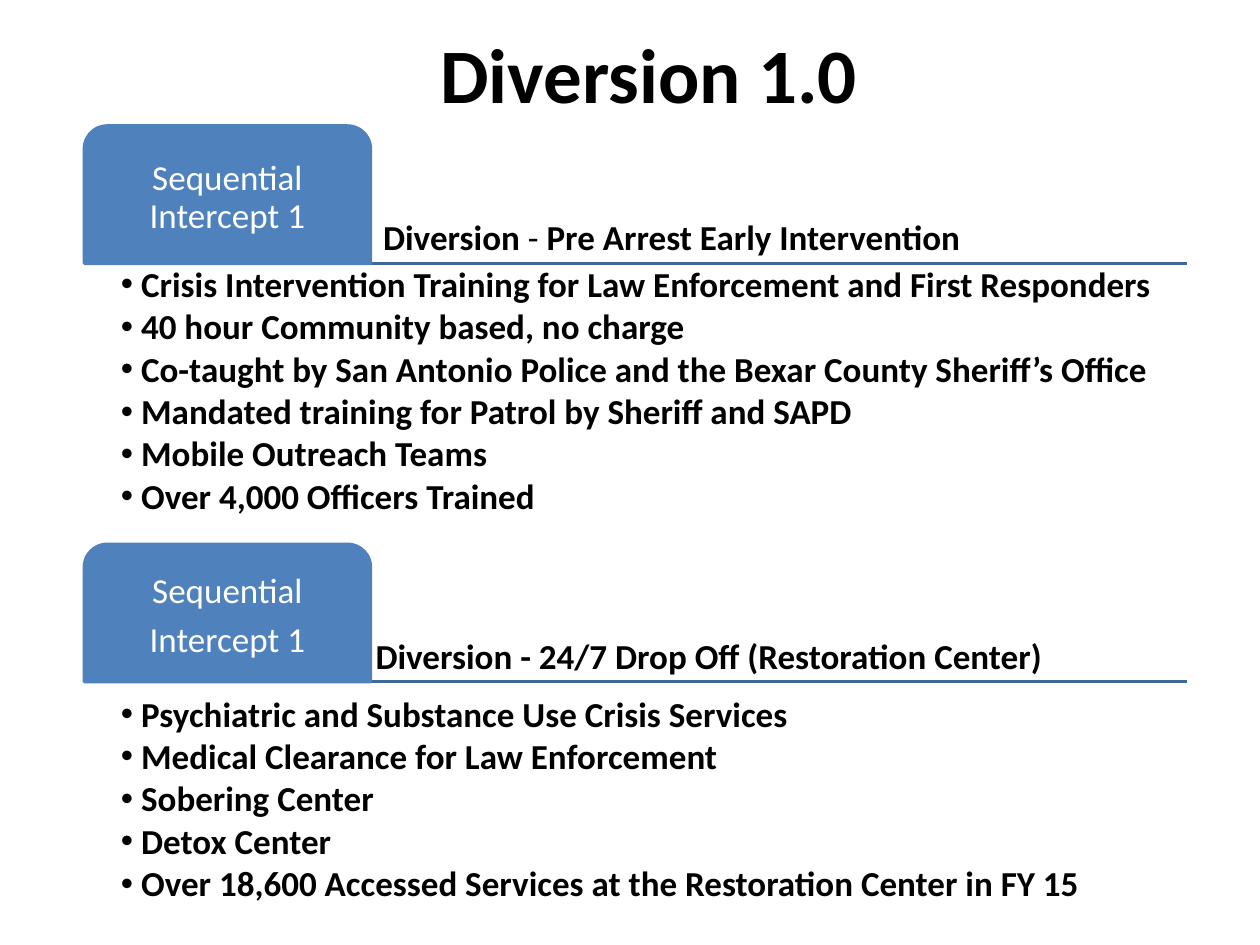
from dataclasses import dataclass
from typing import Any

from lxml.etree import SubElement
from pptx import Presentation
from pptx.dml.color import RGBColor
from pptx.enum.shapes import MSO_CONNECTOR as Connector, MSO_SHAPE as Shape
from pptx.enum.text import MSO_ANCHOR as Anchor, MSO_AUTO_SIZE as AutoSize, PP_ALIGN as Align
from pptx.oxml.ns import qn
from pptx.util import Inches, Pt


@dataclass(frozen=True)
class Theme:
    """Colours, fonts and type sizes of the slide."""
    tab: RGBColor = RGBColor(0x4F, 0x81, 0xBD)
    rule: RGBColor = RGBColor(0x3F, 0x67, 0x97)
    ink: RGBColor = RGBColor(0, 0, 0)
    tab_ink: RGBColor = RGBColor(0xFF, 0xFF, 0xFF)
    font: str = "Calibri"
    bullet_font: str = "Arial"
    title: Pt = Pt(44)
    body: Pt = Pt(20)
    line: Pt = Pt(2)
    tab_gap: Pt = Pt(6.6)
    bullet_gap: Pt = Pt(2.6)


@dataclass(frozen=True)
class Span:
    """A stretch of heading text."""
    text: str
    bold: bool = True


@dataclass(frozen=True)
class Section:
    """An intercept with its tab, heading and bullet list."""
    top: float
    tab: tuple[str, ...]
    heading: tuple[Span, ...]
    heading_indent: float
    list_top: float
    list_height: float
    bullets: tuple[str, ...]


THEME = Theme()
LEFT, WIDTH = 0.67, 8.75
TAB_WIDTH, TAB_HEIGHT = 2.27, 1.09
INSET = Inches(0.04)

SECTIONS = (
    Section(
        1, ("Sequential Intercept 1",),
        (Span("Diversion"), Span(" - ", False), Span("Pre Arrest Early Intervention")),
        0.06, 2.08, 2.18,
        ("Crisis Intervention Training for Law Enforcement and First Responders",
         "40 hour Community based, no charge",
         "Co-taught by San Antonio Police and the Bexar County Sheriff’s Office",
         "Mandated training for Patrol by Sheriff and SAPD",
         "Mobile Outreach Teams",
         "Over 4,000 Officers Trained"),
    ),
    Section(
        4.32, ("Sequential", "Intercept 1"),
        (Span("Diversion - 24/7 Drop Off (Restoration Center)"),),
        0, 5.49, 1.8,
        ("Psychiatric and Substance Use Crisis Services",
         "Medical Clearance for Law Enforcement",
         "Sobering Center",
         "Detox Center",
         "Over 18,600 Accessed Services at the Restoration Center in FY 15"),
    ),
)


def apply(target: Any, values: dict[str, Any]) -> None:
    """Set every attribute in values on target."""
    for name, value in values.items():
        setattr(target, name, value)


def format_frame(frame: Any, anchor: Anchor) -> None:
    """Give a text frame its narrow margins, wrapping and anchor."""
    apply(frame, {"margin_left": INSET, "margin_right": INSET, "margin_top": INSET,
                  "margin_bottom": INSET, "word_wrap": True, "vertical_anchor": anchor})


def write_paragraph(frame: Any, index: int, spans: tuple[Span, ...], color: RGBColor,
                    align: Align, gap: Pt, size: Pt = THEME.body) -> Any:
    """Write one paragraph of spans and return it."""
    para = frame.add_paragraph() if index else frame.paragraphs[0]
    apply(para, {"alignment": align, "line_spacing": 0.9, "space_after": gap,
                 "space_before": Pt(0)})
    for span in spans:
        run = para.add_run()
        run.text = span.text
        apply(run.font, {"name": THEME.font, "size": size, "bold": span.bold})
        run.font.color.rgb = color
    return para


def indent(para: Any, margin: float, hanging: float = 0) -> Any:
    """Set the left margin and hanging indent, and return the properties."""
    props = para._p.get_or_add_pPr()
    props.set("marL", str(Inches(margin)))
    props.set("indent", str(-Inches(hanging)))
    return props


def add_rule(page: Any, section: Section) -> None:
    """Draw the line along the foot of a section's tab."""
    foot = Inches(section.top + TAB_HEIGHT)
    rule = page.shapes.add_connector(Connector.STRAIGHT, Inches(LEFT), foot,
                                     Inches(LEFT + WIDTH), foot)
    apply(rule.line, {"width": THEME.line})
    rule.line.color.rgb = THEME.rule
    SubElement(rule._element.spPr, qn("a:effectLst"))


def add_tab(page: Any, section: Section) -> None:
    """Draw the rounded tab with its label."""
    tab = page.shapes.add_shape(Shape.ROUND_2_SAME_RECTANGLE, Inches(LEFT), Inches(section.top),
                                Inches(TAB_WIDTH), Inches(TAB_HEIGHT))
    tab.shadow.inherit = False
    tab.fill.solid()
    tab.fill.fore_color.rgb = THEME.tab
    tab.line.color.rgb = THEME.tab
    tab.line.width = THEME.line
    format_frame(tab.text_frame, Anchor.MIDDLE)
    for index, text in enumerate(section.tab):
        write_paragraph(tab.text_frame, index, (Span(text, False),), THEME.tab_ink,
                        Align.CENTER, THEME.tab_gap)


def add_heading(page: Any, section: Section) -> None:
    """Place the heading to the right of the tab."""
    box = page.shapes.add_textbox(Inches(LEFT + TAB_WIDTH), Inches(section.top),
                                  Inches(WIDTH - TAB_WIDTH), Inches(TAB_HEIGHT))
    format_frame(box.text_frame, Anchor.BOTTOM)
    para = write_paragraph(box.text_frame, 0, section.heading, THEME.ink, Align.LEFT, Pt(0))
    indent(para, section.heading_indent)


def add_bullets(page: Any, section: Section) -> None:
    """Place the bullet list below the rule."""
    box = page.shapes.add_textbox(Inches(LEFT), Inches(section.list_top),
                                  Inches(WIDTH), Inches(section.list_height))
    format_frame(box.text_frame, Anchor.TOP)
    for index, text in enumerate(section.bullets):
        para = write_paragraph(box.text_frame, index, (Span(text),), THEME.ink,
                               Align.LEFT, THEME.bullet_gap)
        props = indent(para, 0.41, 0.16)
        SubElement(props, qn("a:buFont")).set("typeface", THEME.bullet_font)
        SubElement(props, qn("a:buChar")).set("char", "•")


def set_title(page: Any, text: str) -> None:
    """Place and format the title placeholder."""
    title = page.shapes.title
    apply(title, {"left": Inches(3.38), "top": Inches(0.16),
                  "width": Inches(3.54), "height": Inches(0.84)})
    apply(title.text_frame, {"word_wrap": False, "auto_size": AutoSize.SHAPE_TO_FIT_TEXT,
                             "vertical_anchor": Anchor.TOP})
    para = write_paragraph(title.text_frame, 0, (Span(text),), THEME.ink,
                           Align.CENTER, Pt(0), THEME.title)
    para.line_spacing = 1.0


def main() -> None:
    """Build and save the deck."""
    deck = Presentation()
    apply(deck, {"slide_width": Inches(10), "slide_height": Inches(7.5)})
    page = deck.slides.add_slide(deck.slide_layouts[5])
    set_title(page, "Diversion 1.0")
    for section in SECTIONS:
        for draw in (add_rule, add_heading, add_tab, add_bullets):
            draw(page, section)
    deck.save("out.pptx")


if __name__ == "__main__":
    main()
